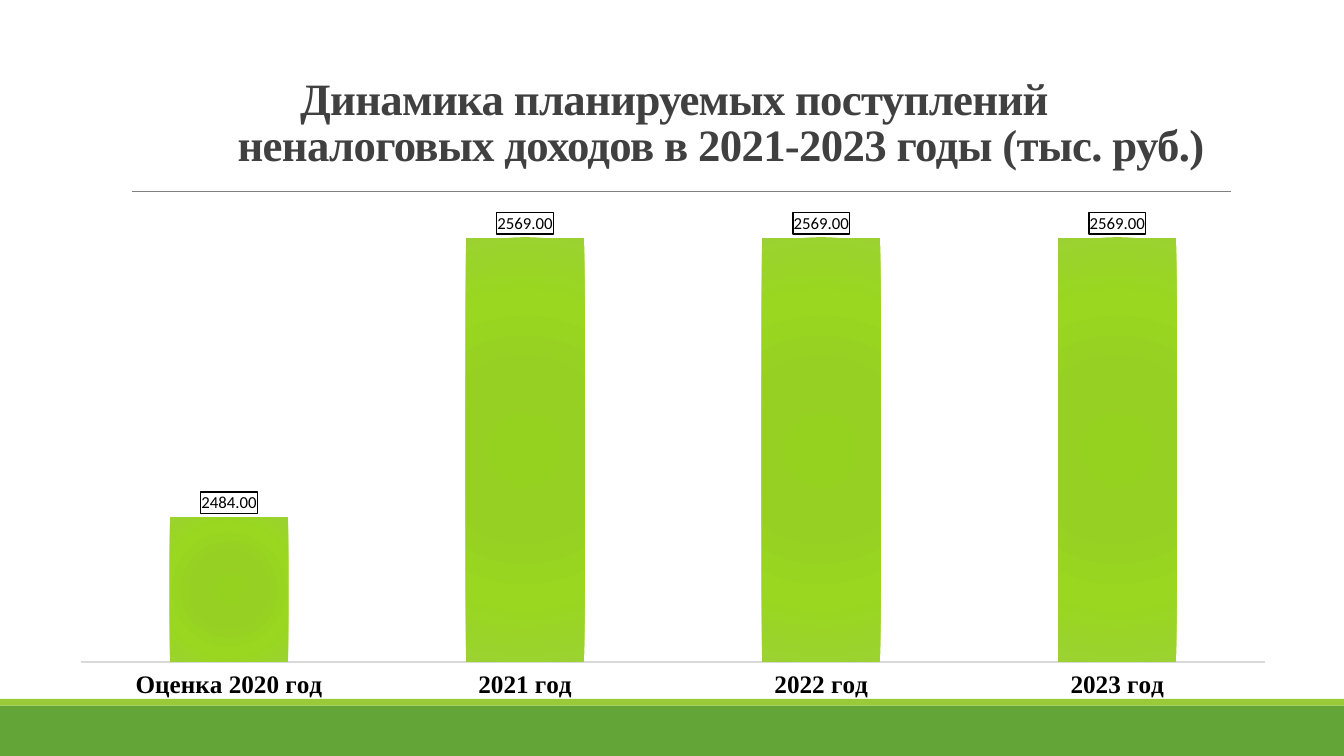
from lxml import etree
from pptx import Presentation
from pptx.chart.data import CategoryChartData
from pptx.dml.color import RGBColor
from pptx.enum.chart import XL_CHART_TYPE, XL_LABEL_POSITION, XL_TICK_LABEL_POSITION, XL_TICK_MARK
from pptx.enum.shapes import MSO_CONNECTOR, MSO_SHAPE
from pptx.enum.text import MSO_ANCHOR, PP_ALIGN
from pptx.oxml import parse_xml
from pptx.oxml.ns import nsdecls, qn
from pptx.util import Cm, Pt

# Content
TITLE_LINES = ["Динамика планируемых поступлений",
               "неналоговых доходов в 2021-2023 годы (тыс. руб.)"]
REVENUE = {"Оценка 2020 год": 2484, "2021 год": 2569, "2022 год": 2569, "2023 год": 2569}
AXIS_RANGE = (2440, 2580)
COLORS = {"band": "63A537", "stripe": "99CB38", "rule": "808080", "title": "404040",
          "text": "000000", "axis": "D9D9D9", "label": "FFFFFF"}
BAR_GRADIENT = [(0, "95D220"), (34, "96D023"), (70, "99D720"), (100, "9BD231")]
PLOT_AREA = {"x": 0.02, "y": 0.02, "w": 0.96, "h": 0.9}
SLIDE_WIDTH, SLIDE_HEIGHT = Cm(33.87), Cm(19.05)
BAND_HEIGHT, STRIPE_HEIGHT = Cm(1.27), Cm(0.17)
TITLE_INDENT = Cm(2.35)


def color(name):
    return RGBColor.from_string(COLORS[name])


def style_font(font, name, size, color_name, bold=False):
    font.name, font.size, font.bold = name, Pt(size), bold
    font.color.rgb = color(color_name)


def add_bar(slide, top, height, color_name):
    shape = slide.shapes.add_shape(MSO_SHAPE.RECTANGLE, 0, top, SLIDE_WIDTH, height)
    shape.shadow.inherit = False
    shape.fill.solid()
    shape.fill.fore_color.rgb = color(color_name)
    shape.line.fill.background()


def add_title(slide):
    box = slide.shapes.add_textbox(Cm(3.02), Cm(0.38), Cm(27.94), Cm(4.04))
    frame = box.text_frame
    frame.word_wrap = True
    frame.vertical_anchor = MSO_ANCHOR.BOTTOM
    frame.text = "\n".join(TITLE_LINES)
    for paragraph in frame.paragraphs:
        paragraph.alignment = PP_ALIGN.CENTER
        paragraph.line_spacing = 0.85
        run = paragraph.runs[0]
        style_font(run.font, "Times New Roman", 32, "title", bold=True)
        run.font._element.set("spc", "-50")
    # The second line is shifted to the right
    frame.paragraphs[1]._p.get_or_add_pPr().set("marL", str(TITLE_INDENT))


def fill_bars(series):
    stops = "".join(f'<a:gs pos="{position * 1000}"><a:srgbClr val="{value}"/></a:gs>'
                    for position, value in BAR_GRADIENT)
    gradient = parse_xml(
        f'<a:gradFill {nsdecls("a")} rotWithShape="1"><a:gsLst>{stops}</a:gsLst>'
        '<a:path path="circle"><a:fillToRect l="50000" t="50000" r="50000" b="50000"/>'
        '</a:path></a:gradFill>')
    properties = series.format.fill._xPr
    properties.insert(0, gradient)


def add_labels(series):
    labels = series.data_labels
    labels.show_value = True
    labels.number_format, labels.number_format_is_linked = "0.00", False
    labels.position = XL_LABEL_POSITION.OUTSIDE_END
    style_font(labels.font, "Calibri", 12, "text")
    frame = parse_xml(
        f'<c:spPr {nsdecls("c", "a")}><a:solidFill><a:srgbClr val="{COLORS["label"]}"/></a:solidFill>'
        f'<a:ln w="12700"><a:solidFill><a:srgbClr val="{COLORS["text"]}"/></a:solidFill></a:ln></c:spPr>')
    labels._element.find(qn("c:numFmt")).addnext(frame)


def place_plot(chart):
    plot_area = chart._chartSpace.chart.plotArea
    for old in plot_area.findall(qn("c:layout")):
        plot_area.remove(old)
    sizes = "".join(f'<c:{key} val="{value}"/>' for key, value in PLOT_AREA.items())
    plot_area.insert(0, parse_xml(
        f'<c:layout {nsdecls("c")}><c:manualLayout><c:layoutTarget val="inner"/>'
        f'<c:xMode val="edge"/><c:yMode val="edge"/>{sizes}</c:manualLayout></c:layout>'))


def add_revenue_chart(slide):
    data = CategoryChartData(number_format="0.00")
    data.categories = list(REVENUE)
    data.add_series("Series 1", list(REVENUE.values()))
    chart = slide.shapes.add_chart(XL_CHART_TYPE.COLUMN_CLUSTERED, Cm(1.42), Cm(4.83),
                                   Cm(31.09), Cm(12.88), data).chart
    chart.has_legend = chart.has_title = False
    style_font(chart.font, "Calibri", 10, "text")

    value_axis = chart.value_axis
    value_axis.minimum_scale, value_axis.maximum_scale = AXIS_RANGE
    value_axis.has_major_gridlines = False
    value_axis.visible = False

    category_axis = chart.category_axis
    category_axis.major_tick_mark = XL_TICK_MARK.NONE
    category_axis.tick_label_position = XL_TICK_LABEL_POSITION.LOW
    category_axis.format.line.color.rgb = color("axis")
    category_axis.format.line.width = Pt(1)
    style_font(category_axis.tick_labels.font, "Times New Roman", 18, "text", bold=True)

    plot = chart.plots[0]
    plot.gap_width = 150
    plot.vary_by_categories = False
    fill_bars(plot.series[0])
    add_labels(plot.series[0])
    place_plot(chart)


def main():
    presentation = Presentation()
    presentation.slide_width, presentation.slide_height = SLIDE_WIDTH, SLIDE_HEIGHT
    slide = presentation.slides.add_slide(presentation.slide_layouts[6])

    # Bottom band and stripe
    band_top = SLIDE_HEIGHT - BAND_HEIGHT
    add_bar(slide, band_top, BAND_HEIGHT, "band")
    add_bar(slide, band_top - STRIPE_HEIGHT, STRIPE_HEIGHT, "stripe")

    # Rule under the title
    rule = slide.shapes.add_connector(MSO_CONNECTOR.STRAIGHT, Cm(3.33), Cm(4.83), Cm(31.01), Cm(4.83))
    rule.line.color.rgb = color("rule")
    rule.line.width = Pt(0.5)
    etree.SubElement(rule._element.spPr, qn("a:effectLst"))

    add_title(slide)
    add_revenue_chart(slide)
    presentation.save("out.pptx")


if __name__ == "__main__":
    main()
